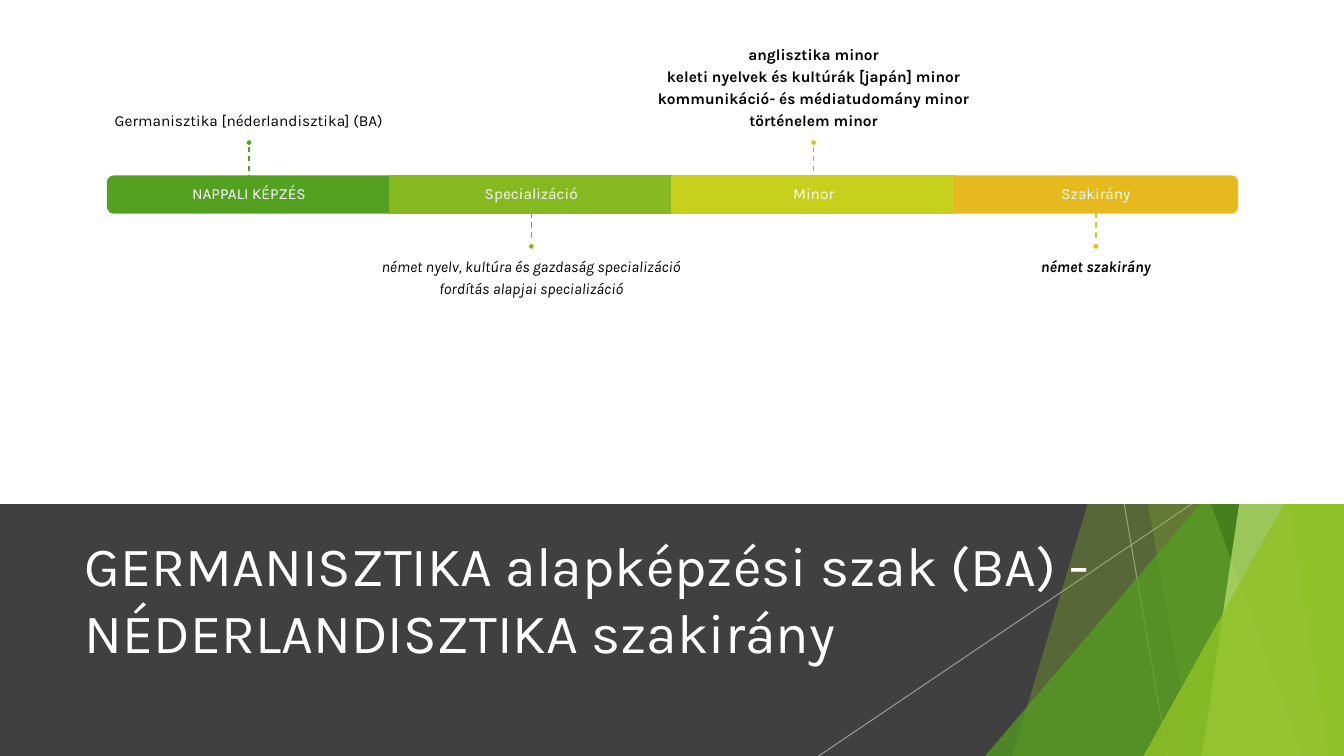
from lxml import etree
from pptx import Presentation
from pptx.dml.color import RGBColor
from pptx.enum.dml import MSO_LINE
from pptx.enum.shapes import MSO_CONNECTOR, MSO_SHAPE
from pptx.enum.text import MSO_ANCHOR, MSO_AUTO_SIZE, PP_ALIGN
from pptx.oxml.ns import qn
from pptx.util import Inches, Pt

FONT = "Karla"
WHITE = RGBColor(0xFF, 0xFF, 0xFF)
BLACK = RGBColor(0, 0, 0)
CHARCOAL = RGBColor(0x40, 0x40, 0x40)
SILVER = RGBColor(0xBF, 0xBF, 0xBF)
LEAF = RGBColor(0x90, 0xC2, 0x26)
GREEN = RGBColor(0x54, 0xA0, 0x21)
FOREST = RGBColor(0x3F, 0x78, 0x19)
PALE = RGBColor(0xC0, 0xE4, 0x74)
LIME = RGBColor(0x86, 0xB8, 0x20)
YELLOW = RGBColor(0xC7, 0xD0, 0x1D)
GOLD = RGBColor(0xE6, 0xB9, 0x1E)
LIME_STEM = RGBColor(0x79, 0xB2, 0x20)
YELLOW_STEM = RGBColor(0xA5, 0xC4, 0x1F)
GOLD_STEM = RGBColor(0xD7, 0xD3, 0x1D)

WIDTH, HEIGHT, BAND_TOP = 13.33, 7.5, 5

TITLE = "GERMANISZTIKA alapképzési szak (BA) - NÉDERLANDISZTIKA szakirány"

# Heading, fill, stem colour, notes, format of the notes
STEPS = [
    ("NAPPALI KÉPZÉS", GREEN, GREEN,
     ["Germanisztika [néderlandisztika] (BA)"], {}),
    ("Specializáció", LIME, LIME_STEM,
     ["német nyelv, kultúra és gazdaság specializáció",
      "fordítás alapjai specializáció"], {"italic": True}),
    ("Minor", YELLOW, YELLOW_STEM,
     ["anglisztika minor",
      "keleti nyelvek és kultúrák [japán] minor",
      "kommunikáció- és médiatudomány minor",
      "történelem minor"], {"bold": True}),
    ("Szakirány", GOLD, GOLD_STEM,
     ["német szakirány"], {"bold": True, "italic": True}),
]

# Polygons and right-leaning triangles of the decoration, from back to front
FACETS = [
    ([(12.28, 0), (WIDTH, 0), (WIDTH, HEIGHT), (10.04, HEIGHT)], LEAF, 30),
    ([(10.5, 0), (WIDTH, 0), (WIDTH, HEIGHT), (11.83, HEIGHT)], LEAF, 20),
    ((9.77, 3.33), GREEN, 72),
    ([(10.21, 0), (WIDTH, 0), (WIDTH, HEIGHT), (12.91, HEIGHT)], FOREST, 70),
    ([(13.03, 0), (WIDTH, 0), (WIDTH, HEIGHT), (11.92, HEIGHT)], PALE, 70),
    ([(11.96, 0), (WIDTH, 0), (WIDTH, HEIGHT), (13.18, HEIGHT)], LEAF, 65),
    ((11.34, 3.93), LEAF, 80),
]


def set_opacity(color_parent, percent):
    color = color_parent.find(".//" + qn("a:srgbClr"))
    etree.SubElement(color, qn("a:alpha"), val=str(percent * 1000))


def paint(shape, color, line=None, opacity=100):
    shape.shadow.inherit = False
    shape.fill.solid()
    shape.fill.fore_color.rgb = color
    if opacity < 100:
        set_opacity(shape.element.spPr, opacity)
    if line is None:
        shape.line.fill.background()
    else:
        shape.line.color.rgb = line
        shape.line.width = Pt(1.5)


def add_box(page, kind, left, top, width, height, color, **style):
    shape = page.shapes.add_shape(kind, Inches(left), Inches(top), Inches(width), Inches(height))
    paint(shape, color, **style)
    return shape


def add_line(page, start, end, color, width, dash=None, opacity=100):
    line = page.shapes.add_connector(MSO_CONNECTOR.STRAIGHT, *map(Inches, start + end))
    line.line.color.rgb = color
    line.line.width = Pt(width)
    if dash is not None:
        line.line.dash_style = dash
    if opacity < 100:
        set_opacity(line.line._get_or_add_ln(), opacity)
    etree.SubElement(line._element.spPr, qn("a:effectLst"))


def write(frame, lines, size=11, color=BLACK, bold=False, italic=False, align=PP_ALIGN.CENTER,
          anchor=MSO_ANCHOR.MIDDLE, margins=(0.09, 0.09, 0.09, 0.09), spacing=0.9, after=4):
    frame.word_wrap = True
    frame.auto_size = MSO_AUTO_SIZE.NONE
    frame.vertical_anchor = anchor
    (frame.margin_left, frame.margin_top,
     frame.margin_right, frame.margin_bottom) = map(Inches, margins)
    for index, line in enumerate(lines):
        para = frame.paragraphs[0] if index == 0 else frame.add_paragraph()
        para.alignment = align
        para.line_spacing = spacing
        para.space_after = Pt(after)
        span = para.add_run()
        span.text = line
        span.font.name = FONT
        span.font.size = Pt(size)
        span.font.color.rgb = color
        span.font.bold = bold
        span.font.italic = italic


def add_text(page, left, top, width, height, lines, **style):
    box = page.shapes.add_textbox(Inches(left), Inches(top), Inches(width), Inches(height))
    write(box.text_frame, lines, **style)


def add_facet(page, outline, color, opacity):
    if isinstance(outline, tuple):
        left, top = outline
        facet = add_box(page, MSO_SHAPE.ISOSCELES_TRIANGLE, left, top,
                        WIDTH - left, HEIGHT - top, color, opacity=opacity)
        facet.adjustments[0] = 1
        return
    points = [(Inches(x), Inches(y)) for x, y in outline]
    builder = page.shapes.build_freeform(*points[0])
    builder.add_line_segments(points[1:], close=True)
    paint(builder.convert_to_shape(), color, opacity=opacity)


def build_title_band(page, top, height):
    add_box(page, MSO_SHAPE.RECTANGLE, 0, top, WIDTH, height, CHARCOAL)
    bottom = top + height
    for start, end in ((11.15, 11.58), (11.82, 8.12)):
        add_line(page, (start, top), (end, bottom), SILVER, 0.75, opacity=70)
    for outline, color, opacity in FACETS:
        add_facet(page, outline, color, opacity)

    # Title in front of the decoration
    title = page.shapes.title
    title.left, title.top = Inches(0.74), Inches(top + 0.21)
    title.width, title.height = Inches(10.5), Inches(1.44)
    write(title.text_frame, [TITLE], size=39.6, color=WHITE, align=PP_ALIGN.LEFT,
          margins=(0.1, 0.05, 0.1, 0.05), spacing=1, after=0)
    page.shapes._spTree.append(title._element)


def build_timeline(page, left, top, step_width, bar_height):
    # Upper panel, which trims the decoration to the band
    add_box(page, MSO_SHAPE.RECTANGLE, 0, 0, WIDTH, BAND_TOP, WHITE)
    last = len(STEPS) - 1
    stem, dot, note_width, note_height = 0.3, 0.07, 4.66, 1.28
    bottom = top + bar_height
    for index, (heading, color, stem_color, notes, style) in enumerate(STEPS):
        step_left = left + index * step_width
        center = step_left + step_width / 2

        # Bar segment, with rounded outer ends
        if index in (0, last):
            cap = add_box(page, MSO_SHAPE.ROUND_2_SAME_RECTANGLE,
                          center - bar_height / 2, top + (bar_height - step_width) / 2,
                          bar_height, step_width, color, line=color)
            cap.rotation = 270 if index == 0 else 90
        else:
            add_box(page, MSO_SHAPE.RECTANGLE, step_left, top, step_width, bar_height,
                    color, line=color)
        add_text(page, step_left, top, step_width, bar_height, [heading], color=WHITE)

        # Notes alternate above and below the bar
        if index % 2 == 0:
            stem_ends = (top - stem, top)
            dot_top = top - stem - dot
            note_top = dot_top - note_height
            anchor, margins = MSO_ANCHOR.BOTTOM, (0, 0, 0, 0.09)
        else:
            stem_ends = (bottom, bottom + stem)
            dot_top = bottom + stem
            note_top = dot_top + dot
            anchor, margins = MSO_ANCHOR.TOP, (0, 0.09, 0, 0)
        add_text(page, center - note_width / 2, note_top, note_width, note_height, notes,
                 anchor=anchor, margins=margins, **style)
        add_line(page, (center, stem_ends[0]), (center, stem_ends[1]), stem_color, 1,
                 dash=MSO_LINE.DASH)
        add_box(page, MSO_SHAPE.OVAL, center - dot / 2, dot_top, dot, dot, color, line=WHITE)


def main():
    deck = Presentation()
    deck.slide_width, deck.slide_height = Inches(WIDTH), Inches(HEIGHT)
    page = deck.slides.add_slide(deck.slide_layouts[5])
    build_title_band(page, BAND_TOP, HEIGHT - BAND_TOP)
    build_timeline(page, 1.07, 1.75, 2.8, 0.36)
    deck.save("out.pptx")


if __name__ == "__main__":
    main()
